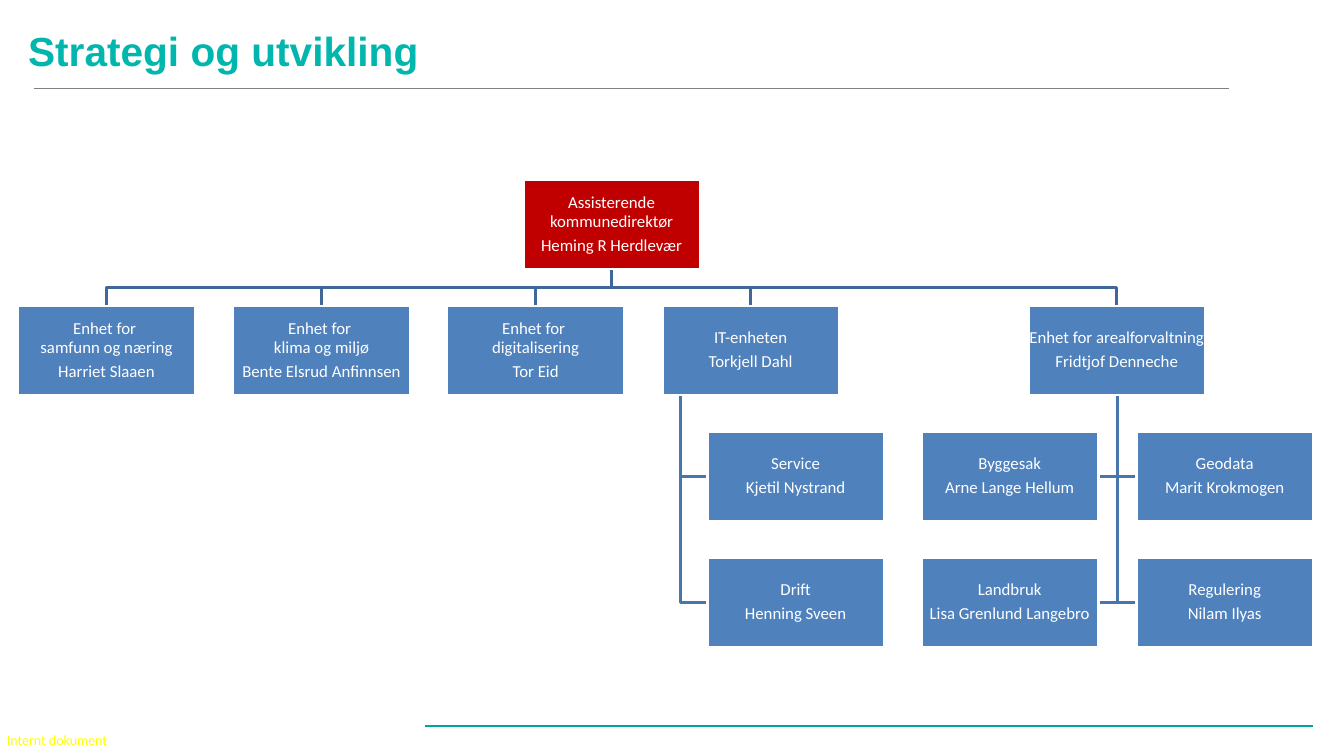
from lxml.etree import SubElement
from pptx import Presentation
from pptx.dml.color import RGBColor
from pptx.enum.shapes import MSO_CONNECTOR, MSO_SHAPE
from pptx.enum.text import MSO_ANCHOR, MSO_AUTO_SIZE, PP_ALIGN
from pptx.oxml.ns import qn
from pptx.util import Inches, Pt

TITLE = "Strategi og utvikling"
MARK = "Internt dokument"
HEAD = ("Assisterende kommunedirektør", "Heming R Herdlevær")
# left edge in px, unit, leader
UNITS = [
    (18, "Enhet for \vsamfunn og næring", "Harriet Slaaen"),
    (233, "Enhet for \vklima og miljø", "Bente Elsrud Anfinnsen"),
    (447, "Enhet for \vdigitalisering", "Tor Eid"),
    (662, "IT-enheten", "Torkjell Dahl"),
    (1028, "Enhet for arealforvaltning", "Fridtjof Denneche"),
]
# left edge, trunk the team hangs from, teams from the top down
TEAMS = [
    (707, 680, [("Service", "Kjetil Nystrand"), ("Drift", "Henning Sveen")]),
    (921, 1117, [("Byggesak", "Arne Lange Hellum"),
                 ("Landbruk", "Lisa Grenlund Langebro")]),
    (1136, 1117, [("Geodata", "Marit Krokmogen"),
                  ("Regulering", "Nilam Ilyas")]),
]
RULES = [(34, 1229, 88, "808080", 0.5), (1313, 425, 726, "00A498", 0.75)]

WIDE, HIGH = 177, 89
TOP, STEP = 180, 126
HEAD_X = 523
RED, BLUE, WHITE = "C00000", "4F81BD", "FFFFFF"
UPPER, LOWER = "3F6797", "4875AC"


def px(n):
    return round(n * 914400 / 100.8)


def tint(code):
    return RGBColor.from_string(code)


def write(frame, *lines, size=12, font="Calibri", color=WHITE, bold=False,
          align=PP_ALIGN.LEFT, anchor=MSO_ANCHOR.MIDDLE, inset=1, wrap=True,
          lead=None, after=None):
    frame.word_wrap = wrap
    frame.auto_size = MSO_AUTO_SIZE.NONE
    frame.vertical_anchor = anchor
    if inset is not None:
        frame.margin_left = frame.margin_right = px(inset)
        frame.margin_top = frame.margin_bottom = px(inset)
    for i, line in enumerate(lines):
        para = frame.add_paragraph() if i else frame.paragraphs[0]
        para.text = line
        para.alignment = align
        para.line_spacing = lead
        para.space_after = after
        for run in para.runs:
            run.font.size = Pt(size)
            run.font.name = font
            run.font.bold = bold
            run.font.color.rgb = tint(color)


def box(x, row, lines, fill=BLUE):
    card = slide.shapes.add_shape(MSO_SHAPE.RECTANGLE, px(x),
                                  px(TOP + row * STEP), px(WIDE), px(HIGH))
    card.shadow.inherit = False
    card.fill.solid()
    card.fill.fore_color.rgb = tint(fill)
    card.line.color.rgb = tint(WHITE)
    card.line.width = Pt(2)
    write(card.text_frame, *lines, align=PP_ALIGN.CENTER, lead=0.9,
          after=Pt(4.2))


def branch(points, color):
    """Draw an open bent line through points given in px."""
    spots = [(px(x), px(y)) for x, y in points]
    build = slide.shapes.build_freeform(*spots[0])
    build.add_line_segments(spots[1:], close=False)
    path = build.convert_to_shape()
    path.shadow.inherit = False
    path.fill.background()
    path.line.color.rgb = tint(color)
    path.line.width = Pt(2)


def rule(x1, x2, y, color, width):
    line = slide.shapes.add_connector(MSO_CONNECTOR.STRAIGHT, px(x1), px(y),
                                      px(x2), px(y))
    line.line.color.rgb = tint(color)
    line.line.width = Pt(width)
    SubElement(line._element.spPr, qn("a:effectLst"))


deck = Presentation()
deck.slide_width, deck.slide_height = Inches(13.33), Inches(7.5)
slide = deck.slides.add_slide(deck.slide_layouts[5])

title = slide.shapes.title
title.left, title.top, title.width, title.height = map(px, (18, 22, 1133, 56))
write(title.text_frame, TITLE, size=29, font="Arial", color="01B6AD",
      bold=True, inset=None)

mark = slide.shapes.add_textbox(px(7), px(732), px(105), px(17))
write(mark.text_frame, MARK, size=10, color="FFFF00", inset=0, wrap=False,
      anchor=MSO_ANCHOR.TOP)
for item in RULES:
    rule(*item)

mid = HEAD_X + WIDE / 2
foot = TOP + HIGH
bar = (foot + TOP + STEP) / 2
for x, *_ in UNITS:
    end = x + WIDE / 2
    branch([(mid, foot), (mid, bar), (end, bar), (end, TOP + STEP)], UPPER)
for x, trunk, teams in TEAMS:
    edge = x if x > trunk else x + WIDE
    for row in range(2, 2 + len(teams)):
        y = TOP + row * STEP + HIGH / 2
        branch([(trunk, foot + STEP), (trunk, y), (edge, y)], LOWER)

box(HEAD_X, 0, HEAD, fill=RED)
for x, *lines in UNITS:
    box(x, 1, lines)
for x, _, teams in TEAMS:
    for row, lines in enumerate(teams, 2):
        box(x, row, lines)

deck.save("out.pptx")
